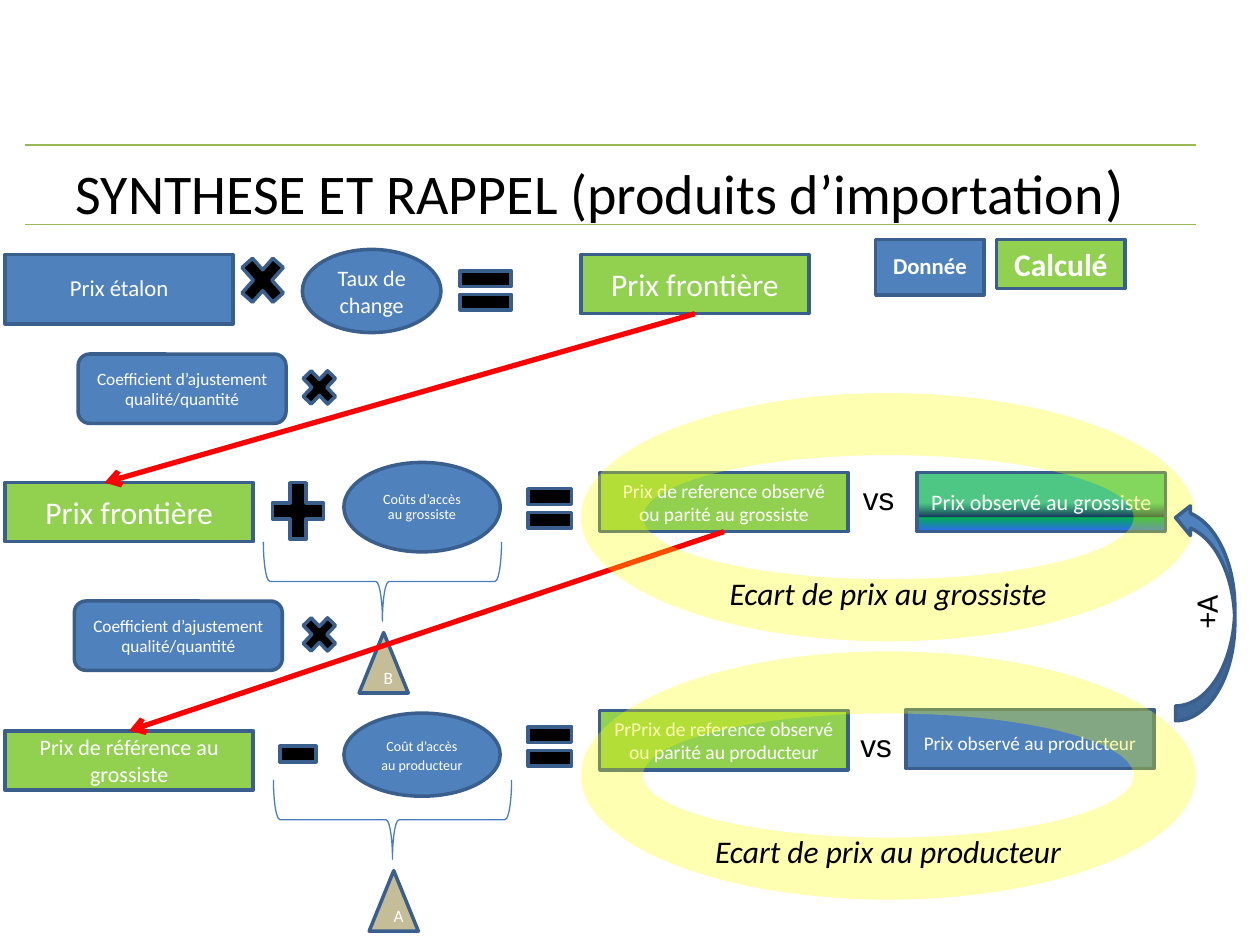
import pptx
import pptx.dml.color
import pptx.enum.shapes
import pptx.enum.text
import pptx.oxml
import pptx.oxml.ns
import pptx.util
from pptx.util import Inches

SHAPES = pptx.enum.shapes.MSO_SHAPE
ANCHORS = pptx.enum.text.MSO_ANCHOR
ALIGNMENTS = pptx.enum.text.PP_ALIGN
BLUE, GREEN, OUTLINE = "4F81BD", "92D050", "3A5F8C"
BLACK, WHITE, RED, TAN = "000000", "FFFFFF", "FF0000", "C4BD97"
NAMESPACE = pptx.oxml.ns.nsdecls("a")


def color(value):
    """Return the colour for a hex string."""
    return pptx.dml.color.RGBColor.from_string(value)


def format_run(run, size, font_color, name="Calibri", bold=False, italic=False):
    """Set the font of one run."""
    run.font.name = name
    run.font.size = pptx.util.Pt(size)
    run.font.color.rgb = color(font_color)
    run.font.bold = bold
    run.font.italic = italic


def add_box(slide, kind, box, fill, text="", size=18, font_color=WHITE,
            line_spacing=1, line_color=OUTLINE, bold=False, italic=False):
    """Add a filled preset shape with centred text."""
    shape = slide.shapes.add_shape(kind, *map(Inches, box))
    shape.shadow.inherit = False
    if fill:
        shape.fill.solid()
        shape.fill.fore_color.rgb = color(fill)
    else:
        shape.fill.background()
    if line_color:
        shape.line.color.rgb = color(line_color)
        shape.line.width = pptx.util.Pt(2)
    else:
        shape.line.fill.background()
    if text:
        shape.text_frame.text = text
        shape.text_frame.word_wrap = True
        shape.text_frame.vertical_anchor = ANCHORS.MIDDLE
        paragraph = shape.text_frame.paragraphs[0]
        paragraph.alignment = ALIGNMENTS.CENTER
        paragraph.line_spacing = line_spacing
        format_run(paragraph.runs[0], size, font_color, bold=bold, italic=italic)
    return shape


def add_line(slide, start, end, line_color, width):
    """Add a straight connector without a shadow."""
    line = slide.shapes.add_connector(
        pptx.enum.shapes.MSO_CONNECTOR.STRAIGHT, *map(Inches, start + end))
    line.line.color.rgb = color(line_color)
    line.line.width = pptx.util.Pt(width)
    line.element.spPr.append(pptx.oxml.parse_xml(f"<a:effectLst {NAMESPACE}/>"))
    return line


def add_arrow(slide, start, end):
    """Add a red arrow that carries a price to the next row."""
    arrow = add_line(slide, start, end, RED, 3)
    arrow.line.fill.solid()
    arrow.line.fill.fore_color.rgb = color(RED)
    arrow.element.spPr.find(pptx.oxml.ns.qn("a:ln")).append(
        pptx.oxml.parse_xml(f'<a:tailEnd type="arrow" {NAMESPACE}/>'))
    return arrow


def add_header(slide, left, top, width, height):
    """Place the title between two green rules."""
    for y in (top, top + height):
        add_line(slide, (left, y), (left + width, y), "98B955", 0.75)
    title = slide.shapes.title
    title.left, title.top, title.width, title.height = map(
        Inches, (left + 0.3, top + 0.02, 9, 0.61))
    title.text_frame.text = "SYNTHESE ET RAPPEL (produits d’importation"
    title.text_frame.vertical_anchor = ANCHORS.TOP
    title.text_frame.auto_size = pptx.enum.text.MSO_AUTO_SIZE.NONE
    paragraph = title.text_frame.paragraphs[0]
    paragraph.alignment = ALIGNMENTS.LEFT
    paragraph.add_run().text = ")"
    for run, size in zip(paragraph.runs, (32, 35)):
        format_run(run, size, BLACK)


def add_border_row(slide, left, top):
    """Place the border price formula and return its result."""
    add_box(slide, SHAPES.RECTANGLE, (left, top + 0.06, 1.81, 0.55), BLUE,
            "Prix étalon", 13, line_spacing=0.9)
    add_box(slide, SHAPES.OVAL, (left + 2.36, top + 0.02, 1.1, 0.66), BLUE,
            "Taux de change", 12.6)
    add_box(slide, SHAPES.MATH_MULTIPLY, (left + 1.81, top, 0.47, 0.53), BLACK)
    add_box(slide, SHAPES.MATH_EQUAL, (left + 3.54, top + 0.08, 0.55, 0.53), BLACK)
    return add_box(slide, SHAPES.RECTANGLE, (left + 4.57, top + 0.06, 1.81, 0.47),
                   GREEN, "Prix frontière")


def add_price_row(slide, left, top, base, operator, cost, equal_top, reference):
    """Place base price, operator, cost and reference price; return both prices."""
    base_text, base_size = base
    sign, sign_box = operator
    cost_text, cost_size, cost_spacing, cost_top, cost_height = cost
    reference_text, reference_top = reference
    x, y, width, height = sign_box
    base_shape = add_box(slide, SHAPES.RECTANGLE, (left, top + 0.16, 1.97, 0.47),
                         GREEN, base_text, base_size)
    add_box(slide, sign, (left + x, top + y, width, height), BLACK)
    add_box(slide, SHAPES.OVAL, (left + 2.69, top + cost_top, 1.24, cost_height),
            BLUE, cost_text, cost_size, line_spacing=cost_spacing)
    add_box(slide, SHAPES.MATH_EQUAL, (left + 4.09, top + equal_top, 0.47, 0.53), BLACK)
    reference_shape = add_box(
        slide, SHAPES.RECTANGLE, (left + 4.72, top + reference_top, 1.97, 0.47),
        GREEN, reference_text, 11.2)
    return base_shape, reference_shape


def add_observed_wholesale(slide, left, top):
    """Place the observed wholesale price with its gradient."""
    shape = add_box(slide, SHAPES.RECTANGLE, (left, top, 1.97, 0.47), GREEN,
                    "Prix observé au grossiste", 12.6)
    stops = ((51, "00B050", 69), (75, "17375E", 100),
             (75, "00B050", 100), (100, "3366FF", 100))
    stop_xml = "".join(
        f'<a:gs pos="{position * 1000}"><a:srgbClr val="{value}">'
        f'<a:alpha val="{alpha * 1000}"/></a:srgbClr></a:gs>'
        for position, value, alpha in stops)
    properties = shape.element.spPr
    solid = properties.find(pptx.oxml.ns.qn("a:solidFill"))
    properties.replace(solid, pptx.oxml.parse_xml(
        f'<a:gradFill rotWithShape="1" {NAMESPACE}><a:gsLst>{stop_xml}</a:gsLst>'
        '<a:lin ang="5400000" scaled="0"/></a:gradFill>'))


def add_cost_bracket(slide, left, top, letter):
    """Place a brace pointing down at a lettered triangle."""
    brace = add_box(slide, SHAPES.LEFT_BRACE, (left, top, 0.63, 1.89), None,
                    line_color="4B7EBC")
    brace.line.width = pptx.util.Pt(0.75)
    brace.rotation = 270
    add_box(slide, SHAPES.ISOSCELES_TRIANGLE, (left + 0.13, top + 1.35, 0.39, 0.48),
            TAN, letter, 9.9)


def add_gap_ring(slide, left, top, text):
    """Place a translucent ring with the price gap label in its lower part."""
    ring = add_box(slide, SHAPES.DONUT, (left, top, 4.88, 1.97), "FFFF00", text,
                   font_color=BLACK, line_color=None, italic=True)
    ring.text_frame.margin_top = Inches(1.2)
    ring.text_frame.margin_bottom = 0
    fill = ring.element.spPr.find(pptx.oxml.ns.qn("a:solidFill"))
    fill[0].append(pptx.oxml.parse_xml(f'<a:alpha val="30000" {NAMESPACE}/>'))


def add_return_arrow(slide, left, top):
    """Place the curved arrow from producer to wholesale price."""
    arrow = add_box(slide, SHAPES.CURVED_RIGHT_ARROW, (left, top, 0.47, 1.73), BLUE,
                    "+A", font_color=BLACK)
    arrow.rotation = 180
    arrow.text_frame._txBody.bodyPr.set("vert", "vert")


def add_legend(slide, left, top):
    """Place the colour key."""
    add_box(slide, SHAPES.RECTANGLE, (left, top, 0.86, 0.44), BLUE, "Donnée", 13,
            line_spacing=0.9, bold=True)
    add_box(slide, SHAPES.RECTANGLE, (left + 0.96, top, 1.02, 0.39), GREEN, "Calculé",
            bold=True)


def add_coefficient(slide, left, top, width):
    """Place the adjustment coefficient and its multiplication sign."""
    add_box(slide, SHAPES.ROUNDED_RECTANGLE, (left, top, 1.65, 0.55), BLUE,
            "Coefficient d’ajustement qualité/quantité", 9.9)
    add_box(slide, SHAPES.MATH_MULTIPLY, (left + width - 0.37, top + 0.07, 0.37, 0.39),
            BLACK)


def add_versus(slide, left, top):
    """Place the word between two compared prices."""
    shape = slide.shapes.add_textbox(*map(Inches, (left, top, 0.45, 0.4)))
    shape.text_frame.text = "vs"
    shape.text_frame.word_wrap = False
    format_run(shape.text_frame.paragraphs[0].runs[0], 18, BLACK, name="Arial")


def main():
    """Build the slide and save it."""
    presentation = pptx.Presentation()
    presentation.slide_width, presentation.slide_height = Inches(10), Inches(7.5)
    slide = presentation.slides.add_slide(presentation.slide_layouts[5])
    add_header(slide, 0.2, 1.15, 9.29, 0.63)
    border = add_border_row(slide, 0.04, 1.96)
    _, wholesale_reference = add_price_row(
        slide, 0.04, 3.67, ("Prix frontière", 18),
        (SHAPES.MATH_PLUS, (2.05, 0.08, 0.55, 0.61)),
        ("Coûts d’accès au grossiste", 8.1, 0.9, 0, 0.71), 0.1,
        ("Prix de reference observé ou parité au grossiste", 0.08))
    producer_base, _ = add_price_row(
        slide, 0.04, 5.64, ("Prix de référence au grossiste", 12.6),
        (SHAPES.MATH_MINUS, (2.13, 0.08, 0.39, 0.53)),
        ("Coût d’accès au producteur", 8, 1.1, 0.02, 0.66), 0.02,
        ("PrPrix de reference observé ou parité au producteur", 0))
    add_box(slide, SHAPES.RECTANGLE, (7.19, 5.63, 1.97, 0.47), BLUE,
            "Prix observé au producteur", 11, line_spacing=1.3)
    add_observed_wholesale(slide, 7.28, 3.75)
    add_cost_bracket(slide, 2.8, 5.56, "A")
    add_cost_bracket(slide, 2.72, 3.67, "B")
    add_arrow(slide, (5.51, 2.49), (0.83, 3.83)).begin_connect(border, 2)
    arrow = add_arrow(slide, (5.75, 4.22), (1.02, 5.8))
    arrow.begin_connect(wholesale_reference, 2)
    arrow.end_connect(producer_base, 0)
    add_gap_ring(slide, 4.61, 5.17, "Ecart de prix au producteur")
    add_gap_ring(slide, 4.61, 3.12, "Ecart de prix au grossiste")
    add_return_arrow(slide, 9.33, 3.99)
    add_legend(slide, 6.95, 1.9)
    add_coefficient(slide, 0.62, 2.81, 2.1)
    add_coefficient(slide, 0.59, 4.77, 2.13)
    add_versus(slide, 6.75, 3.75)
    add_versus(slide, 6.73, 5.71)
    presentation.save("out.pptx")


if __name__ == "__main__":
    main()
